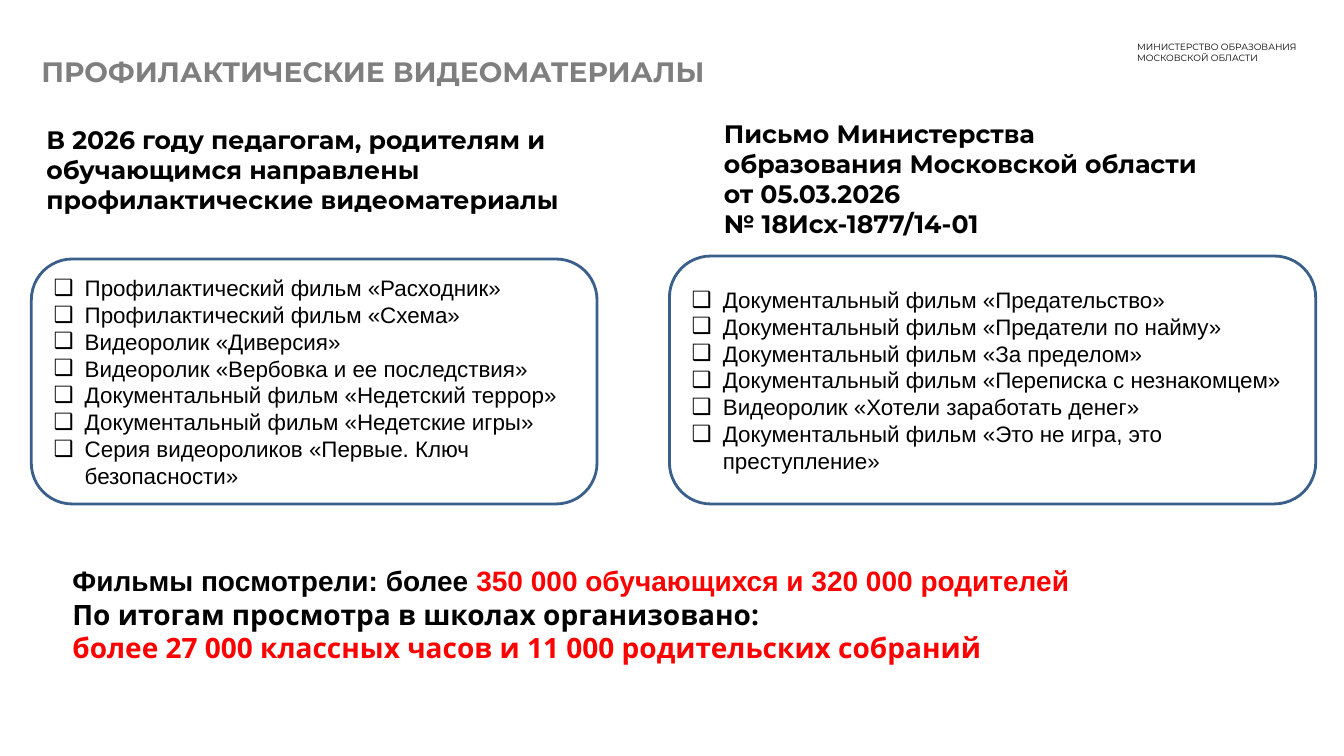
from dataclasses import dataclass

from lxml.etree import SubElement
from pptx import Presentation
from pptx.dml.color import RGBColor
from pptx.enum.shapes import MSO_SHAPE
from pptx.enum.text import MSO_ANCHOR, MSO_AUTO_SIZE, PP_ALIGN
from pptx.oxml.ns import qn
from pptx.util import Inches, Pt

BLACK = RGBColor(0x00, 0x00, 0x00)
GRAY = RGBColor(0x7F, 0x7F, 0x7F)
RED = RGBColor(0xFF, 0x00, 0x00)
BLUE = RGBColor(0x3A, 0x5F, 0x8B)
WHITE = RGBColor(0xFF, 0xFF, 0xFF)

WIDTH, HEIGHT = Inches(13.33), Inches(7.5)
COMPARISON_LAYOUT = 4
BULLET_INDENT = Inches(0.31)
SIDE_MARGIN = Inches(0.1)
PANEL_MARGIN = Inches(0.22)


@dataclass(frozen=True)
class Frame:
    """Position and size in percent of the slide's width and height."""
    left: float
    top: float
    width: float
    height: float

    def bounds(self) -> tuple[int, int, int, int]:
        return (int(WIDTH * self.left / 100), int(HEIGHT * self.top / 100),
                int(WIDTH * self.width / 100), int(HEIGHT * self.height / 100))


@dataclass(frozen=True)
class Style:
    size: float
    name: str = "Montserrat"
    bold: bool = False
    color: RGBColor = BLACK


@dataclass(frozen=True)
class Column:
    heading_index: int
    heading_frame: Frame
    heading: list[str]
    panel_index: int
    panel_frame: Frame
    films: list[str]


@dataclass(frozen=True)
class ResultLine:
    font_name: str
    segments: list[tuple[str, RGBColor]]


TITLE_STYLE = Style(20, bold=True, color=GRAY)
HEADING_STYLE = Style(18, bold=True)
MINISTRY_STYLE = Style(6.5)
FILM_STYLE = Style(16, "Arial")

COLUMNS = [
    Column(
        1, Frame(2.7, 15.73, 49, 13.33),
        ["В 2026 году педагогам, родителям и обучающимся направлены "
         "профилактические видеоматериалы"],
        2, Frame(2.33, 34.27, 42.09, 32.4),
        ["Профилактический фильм «Расходник»",
         "Профилактический фильм «Схема»",
         "Видеоролик «Диверсия»",
         "Видеоролик «Вербовка и ее последствия»",
         "Документальный фильм «Недетский террор»",
         "Документальный фильм «Недетские игры»",
         "Серия видеороликов «Первые. Ключ безопасности»"]),
    Column(
        3, Frame(53.11, 14.93, 38.11, 17.33),
        ["Письмо Министерства образования Московской области от 05.03.2026",
         "№ 18Исх-1877/14-01"],
        4, Frame(49.81, 33.87, 48.09, 32.8),
        ["Документальный фильм «Предательство»",
         "Документальный фильм «Предатели по найму»",
         "Документальный фильм «За пределом»",
         "Документальный фильм «Переписка с незнакомцем»",
         "Видеоролик «Хотели заработать денег»",
         "Документальный фильм «Это не игра, это преступление»"]),
]

RESULTS = [
    ResultLine("Arial", [("Фильмы посмотрели: более ", BLACK),
                         ("350 000 обучающихся и 320 000 родителей", RED)]),
    ResultLine("Open Sans", [("По итогам просмотра в школах организовано:", BLACK)]),
    ResultLine("Open Sans",
               [("более 27 000 классных часов и 11 000 родительских собраний", RED)]),
]


def place(shape, frame: Frame) -> None:
    shape.left, shape.top, shape.width, shape.height = frame.bounds()


def prepare_text(shape, anchor=MSO_ANCHOR.TOP, margin: int = SIDE_MARGIN):
    text_frame = shape.text_frame
    text_frame.word_wrap = True
    text_frame.auto_size = MSO_AUTO_SIZE.NONE
    text_frame.vertical_anchor = anchor
    text_frame.margin_left = text_frame.margin_right = margin
    text_frame.margin_top = text_frame.margin_bottom = Inches(0.05)
    return text_frame


def add_bullet(paragraph) -> None:
    properties = paragraph._p.get_or_add_pPr()
    properties.set("marL", str(BULLET_INDENT))
    properties.set("indent", str(-BULLET_INDENT))
    SubElement(properties, qn("a:buFont"), typeface="Arial")
    SubElement(properties, qn("a:buChar"), char="❑")


def format_paragraph(paragraph, style: Style) -> None:
    paragraph.alignment = PP_ALIGN.LEFT
    paragraph.line_spacing = 1.0
    paragraph.space_before = paragraph.space_after = Pt(0)
    font = paragraph.font
    font.name, font.size, font.bold = style.name, Pt(style.size), style.bold
    font.color.rgb = style.color


def write_lines(text_frame, lines: list[str], style: Style, bulleted: bool = False) -> None:
    for number, line in enumerate(lines):
        paragraph = text_frame.add_paragraph() if number else text_frame.paragraphs[0]
        paragraph.text = line
        if bulleted:
            add_bullet(paragraph)
        format_paragraph(paragraph, style)


def add_column(slide, column: Column) -> None:
    outline = slide.shapes.add_shape(MSO_SHAPE.ROUNDED_RECTANGLE,
                                     *column.panel_frame.bounds())
    outline.shadow.inherit = False
    outline.fill.background()
    outline.line.color.rgb = BLUE
    outline.line.width = Pt(2)

    heading = slide.placeholders[column.heading_index]
    place(heading, column.heading_frame)
    write_lines(prepare_text(heading), column.heading, HEADING_STYLE)

    films = slide.placeholders[column.panel_index]
    place(films, column.panel_frame)
    write_lines(prepare_text(films, MSO_ANCHOR.MIDDLE, PANEL_MARGIN),
                column.films, FILM_STYLE, bulleted=True)


def add_results(slide, frame: Frame) -> None:
    text_frame = prepare_text(slide.shapes.add_textbox(*frame.bounds()))
    for number, line in enumerate(RESULTS):
        paragraph = text_frame.add_paragraph() if number else text_frame.paragraphs[0]
        for text, color in line.segments:
            run = paragraph.add_run()
            run.text = text
            run.font.color.rgb = color
        format_paragraph(paragraph, Style(20, line.font_name, bold=True))


def main() -> None:
    presentation = Presentation()
    presentation.slide_width, presentation.slide_height = WIDTH, HEIGHT
    slide = presentation.slides.add_slide(presentation.slide_layouts[COMPARISON_LAYOUT])
    slide.background.fill.solid()
    slide.background.fill.fore_color.rgb = WHITE

    title = slide.shapes.title
    place(title, Frame(2.33, 6.53, 73.67, 5.73))
    write_lines(prepare_text(title), ["ПРОФИЛАКТИЧЕСКИЕ ВИДЕОМАТЕРИАЛЫ"], TITLE_STYLE)

    ministry = slide.shapes.add_textbox(*Frame(83.87, 4.8, 14.7, 4.13).bounds())
    write_lines(prepare_text(ministry),
                ["МИНИСТЕРСТВО ОБРАЗОВАНИЯ\nМОСКОВСКОЙ ОБЛАСТИ"], MINISTRY_STYLE)

    for column in COLUMNS:
        add_column(slide, column)
    add_results(slide, Frame(4.65, 73.87, 92.65, 14.67))
    presentation.save("out.pptx")


if __name__ == "__main__":
    main()
